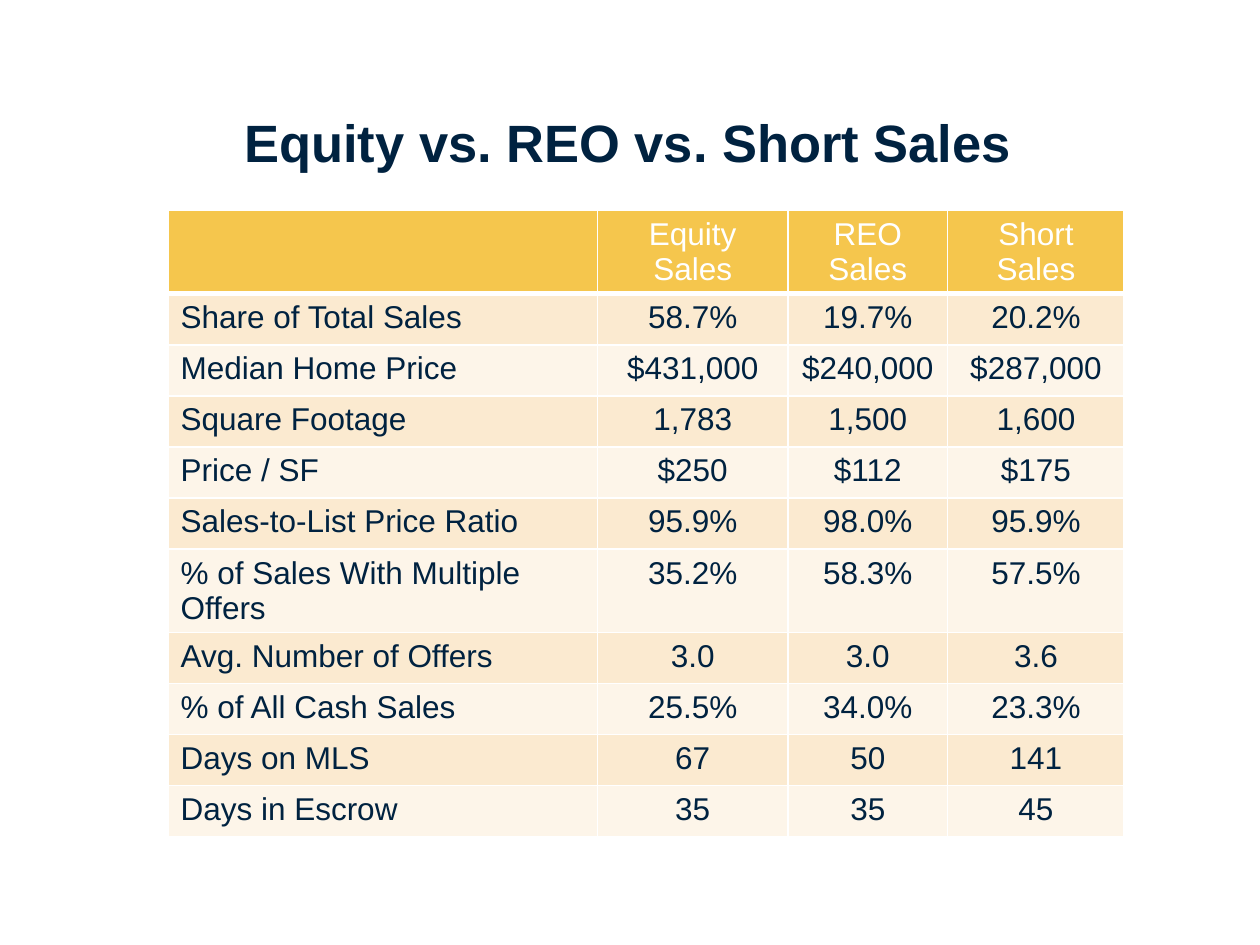
from lxml import etree
from pptx import Presentation
from pptx.dml.color import RGBColor
from pptx.enum.text import MSO_ANCHOR, PP_ALIGN
from pptx.oxml.ns import qn
from pptx.util import Pt

LEFT, CENTER = PP_ALIGN.LEFT, PP_ALIGN.CENTER
TOP = MSO_ANCHOR.TOP
NAVY, WHITE, GOLD = "002240", "FFFFFF", "F5C64D"
BANDS = "FBEAD0", "FDF5E9"

TITLE = "Equity vs. REO vs. Short Sales"
ROWS = [
    ("", "Equity Sales", "REO Sales", "Short Sales"),
    ("Share of Total Sales", "58.7%", "19.7%", "20.2%"),
    ("Median Home Price", "$431,000", "$240,000", "$287,000"),
    ("Square Footage", "1,783", "1,500", "1,600"),
    ("Price / SF", "$250", "$112", "$175"),
    ("Sales-to-List Price Ratio", "95.9%", "98.0%", "95.9%"),
    ("% of Sales With Multiple Offers", "35.2%", "58.3%", "57.5%"),
    ("Avg. Number of Offers", "3.0", "3.0", "3.6"),
    ("% of All Cash Sales", "25.5%", "34.0%", "23.3%"),
    ("Days on MLS", "67", "50", "141"),
    ("Days in Escrow", "35", "35", "45"),
]
WIDTHS = 245.5, 108.7, 91.4, 100.8
ROW_H = 29.2


def color(hex_code):
    return RGBColor.from_string(hex_code)


def style(para, size, hue, align, bold=False):
    para.alignment = align
    font = para.font
    font.name, font.size, font.bold = "Arial", Pt(size), bold
    font.color.rgb = color(hue)


def add_borders(cell, bottom):
    """Draw white cell borders, placed before the fill as the schema asks."""
    props = cell._tc.get_or_add_tcPr()
    sides = ("lnL", 1), ("lnR", 1), ("lnT", 1), ("lnB", bottom)
    for i, (side, width) in enumerate(sides):
        line = etree.Element(qn("a:" + side), w=str(Pt(width)))
        fill = etree.SubElement(line, qn("a:solidFill"))
        etree.SubElement(fill, qn("a:srgbClr"), val=WHITE)
        props.insert(i, line)


def add_title(slide):
    title = slide.shapes.title
    title.left, title.top = Pt(132.5), Pt(56.9)
    title.width, title.height = Pt(551.5), Pt(54.7)
    frame = title.text_frame
    frame.text = TITLE
    frame.vertical_anchor = TOP
    frame.margin_top = Pt(6)
    style(frame.paragraphs[0], 30, NAVY, LEFT, bold=True)


def add_sales(slide):
    table = slide.shapes.add_table(
        len(ROWS), len(WIDTHS), Pt(96), Pt(120.3),
        Pt(sum(WIDTHS)), Pt(ROW_H * len(ROWS))).table
    for col, width in zip(table.columns, WIDTHS):
        col.width = Pt(width)
    for r, row in enumerate(ROWS):
        table.rows[r].height = Pt(ROW_H)
        head = r == 0
        for c, text in enumerate(row):
            cell = table.cell(r, c)
            cell.text = text
            cell.fill.solid()
            cell.fill.fore_color.rgb = color(GOLD if head else BANDS[(r - 1) % 2])
            add_borders(cell, 3 if head else 1)
            style(cell.text_frame.paragraphs[0], 18,
                  WHITE if head else NAVY, CENTER if c else LEFT)


def main():
    deck = Presentation()
    deck.slide_width, deck.slide_height = Pt(720), Pt(540)
    slide = deck.slides.add_slide(deck.slide_layouts[5])
    add_title(slide)
    add_sales(slide)
    deck.save("out.pptx")


if __name__ == "__main__":
    main()
